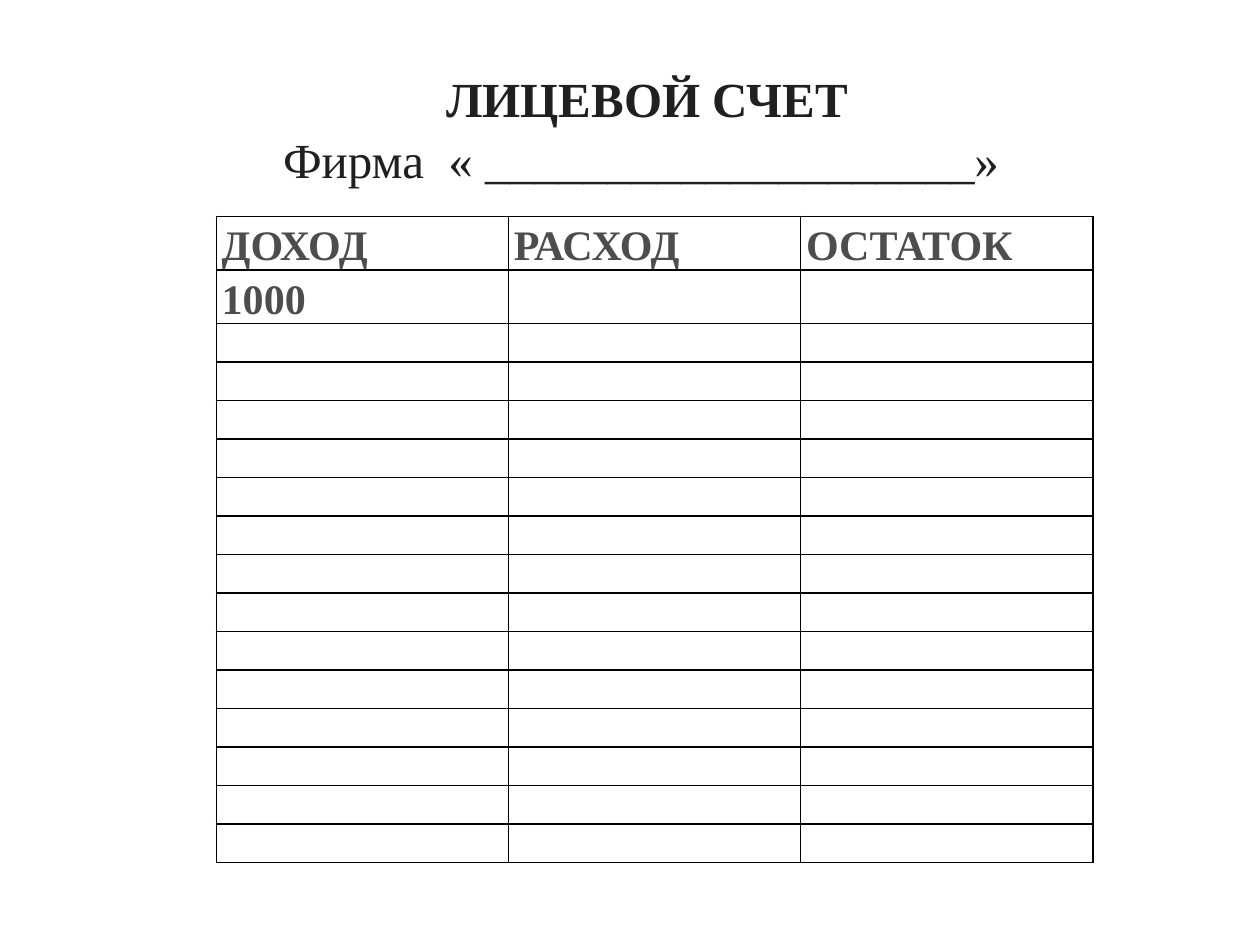
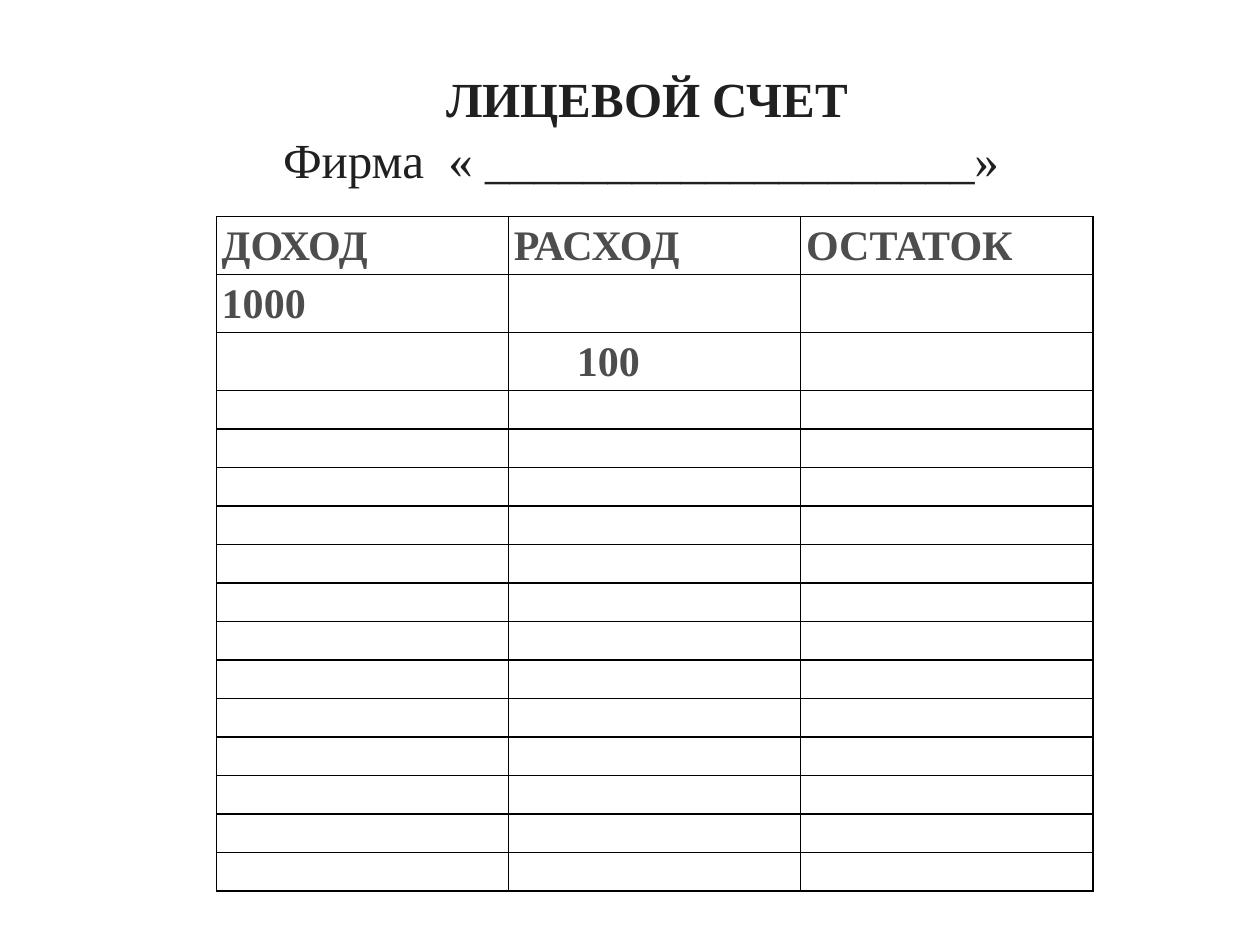
"""Build two account sheets, each a heading above a ledger of income, expense and balance."""
from dataclasses import dataclass
from typing import Any

from lxml import etree
from pptx import Presentation
from pptx.dml.color import RGBColor
from pptx.enum.text import MSO_ANCHOR, MSO_AUTO_SIZE, PP_ALIGN
from pptx.oxml.ns import qn
from pptx.util import Cm, Pt

CENTER = PP_ALIGN.CENTER
MIDDLE = MSO_ANCHOR.MIDDLE
NO_AUTOFIT = MSO_AUTO_SIZE.NONE
TITLE_ONLY_LAYOUT = 5

COLORS = {"paper": "FFFFFF", "heading": "202020", "entry": "4D4D4D", "rule": "000000"}
FONT = "Times New Roman"
HEADING_LINES = (("ЛИЦЕВОЙ СЧЕТ", True), ("Фирма  « ____________________» ", False))
COLUMNS = ("ДОХОД", "РАСХОД", "ОСТАТОК")
ROW_COUNT = 16

HEADING_BOX = {"left": Cm(5.36), "top": Cm(1.24), "width": Cm(15.37), "height": Cm(2.64)}
HEADING_FRAME = {"word_wrap": False, "auto_size": NO_AUTOFIT, "vertical_anchor": MIDDLE}
HEADING_PARAGRAPH = {"alignment": CENTER, "line_spacing": 1.05}
HEADING_FONT = {"name": FONT, "size": Pt(28)}
ENTRY_PARAGRAPH = {"line_spacing": 1.15, "space_after": Pt(10)}
ENTRY_FONT = {"name": FONT, "size": Pt(24), "bold": True}
CELL_MARGINS = {"margin_left": Cm(0.11), "margin_right": Cm(0.11), "margin_top": 0, "margin_bottom": 0}
PLAIN_TABLE = {"first_row": False, "horz_banding": False}

LEDGER_LEFT = Cm(4.36)
LEDGER_TOP = Cm(4.36)
COLUMN_WIDTH = Cm(5.89)
RULE_WIDTH = Pt(1)


@dataclass(frozen=True)
class Entry:
    """An amount in a ledger column, with its indent."""

    column: int
    amount: str
    indent: int = 0


@dataclass(frozen=True)
class Ledger:
    """Entries, one to a row below the header, and the row heights."""

    entries: tuple[Entry, ...]
    filled_height: int
    empty_height: int


INCOME = Entry(0, "1000")
EXPENSE = Entry(1, "100", Cm(1.27))
LEDGERS = (
    Ledger((INCOME,), Cm(1.08), Cm(0.74)),
    Ledger((INCOME, EXPENSE), Cm(1.17), Cm(0.76)),
)


def apply(target: Any, values: dict[str, Any]) -> None:
    """Set every format value on the target."""
    for name, value in values.items():
        setattr(target, name, value)


def color(name: str) -> RGBColor:
    """Return a palette colour."""
    return RGBColor.from_string(COLORS[name])


def draw_heading(slide: Any) -> None:
    """Fill and place the title with the account name and firm line."""
    heading = slide.shapes.title
    apply(heading, HEADING_BOX)
    heading.fill.solid()
    heading.fill.fore_color.rgb = color("paper")
    frame = heading.text_frame
    apply(frame, HEADING_FRAME)
    for index, (wording, bold) in enumerate(HEADING_LINES):
        paragraph = frame.add_paragraph() if index else frame.paragraphs[0]
        apply(paragraph, HEADING_PARAGRAPH)
        run = paragraph.add_run()
        run.text = wording
        apply(run.font, HEADING_FONT | {"bold": bold})
        run.font.color.rgb = color("heading")


def rule_cell(cell: Any) -> None:
    """Give a cell its margins, no fill and a rule on each side."""
    apply(cell, CELL_MARGINS)
    cell.fill.background()
    properties = cell._tc.get_or_add_tcPr()
    for position, side in enumerate(("lnL", "lnR", "lnT", "lnB")):
        rule = etree.Element(qn(f"a:{side}"), w=str(RULE_WIDTH))
        fill = etree.SubElement(rule, qn("a:solidFill"))
        etree.SubElement(fill, qn("a:srgbClr"), val=COLORS["rule"])
        properties.insert(position, rule)


def write_entry(cell: Any, wording: str, indent: int = 0) -> None:
    """Write a bold entry into a cell."""
    cell.margin_left = CELL_MARGINS["margin_left"] + indent
    paragraph = cell.text_frame.paragraphs[0]
    apply(paragraph, ENTRY_PARAGRAPH)
    run = paragraph.add_run()
    run.text = wording
    apply(run.font, ENTRY_FONT)
    run.font.color.rgb = color("entry")


def draw_ledger(slide: Any, ledger: Ledger) -> None:
    """Draw the ruled table and its entries."""
    filled_rows = 1 + len(ledger.entries)
    heights = [ledger.filled_height] * filled_rows
    heights += [ledger.empty_height] * (ROW_COUNT - filled_rows)
    table = slide.shapes.add_table(
        ROW_COUNT, len(COLUMNS), LEDGER_LEFT, LEDGER_TOP,
        COLUMN_WIDTH * len(COLUMNS), sum(heights),
    ).table
    apply(table, PLAIN_TABLE)
    for row, height in zip(table.rows, heights):
        row.height = height
    for cell in table.iter_cells():
        rule_cell(cell)
    for column, caption in enumerate(COLUMNS):
        write_entry(table.cell(0, column), caption)
    for row, entry in enumerate(ledger.entries, start=1):
        write_entry(table.cell(row, entry.column), entry.amount, entry.indent)


def main() -> None:
    """Build and save the account sheets."""
    deck = Presentation()
    deck.slide_width, deck.slide_height = Cm(25.4), Cm(19.05)
    for ledger in LEDGERS:
        slide = deck.slides.add_slide(deck.slide_layouts[TITLE_ONLY_LAYOUT])
        draw_ledger(slide, ledger)
        draw_heading(slide)
    deck.save("out.pptx")


if __name__ == "__main__":
    main()
